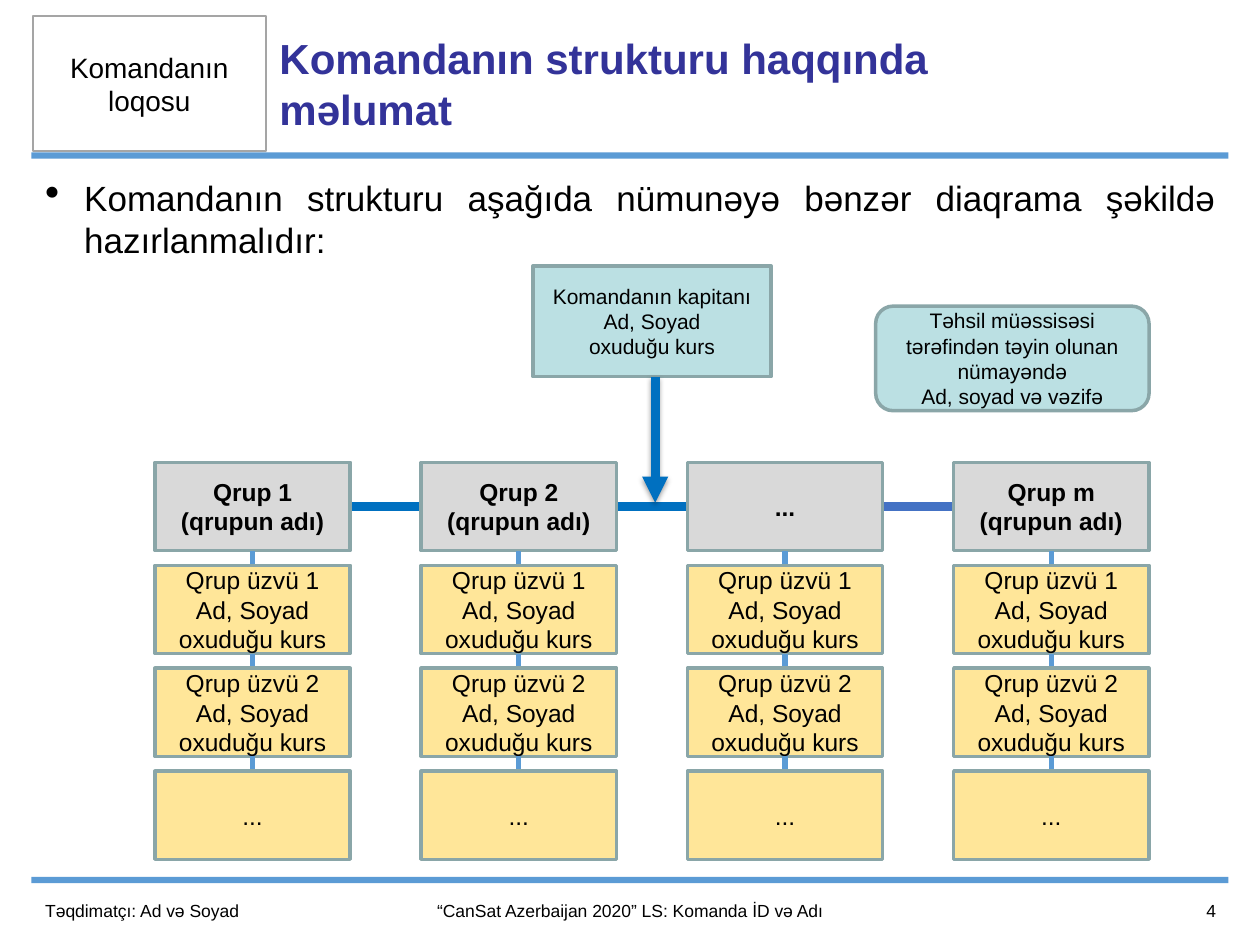
from dataclasses import dataclass

from lxml import etree
from pptx import Presentation
from pptx.dml.color import RGBColor
from pptx.enum.shapes import MSO_CONNECTOR, MSO_SHAPE
from pptx.enum.text import MSO_ANCHOR, PP_ALIGN
from pptx.oxml.ns import qn
from pptx.util import Inches, Pt

STRAIGHT = MSO_CONNECTOR.STRAIGHT
RECTANGLE, ROUNDED = MSO_SHAPE.RECTANGLE, MSO_SHAPE.ROUNDED_RECTANGLE
LEFT, CENTER, RIGHT, JUSTIFY = PP_ALIGN.LEFT, PP_ALIGN.CENTER, PP_ALIGN.RIGHT, PP_ALIGN.JUSTIFY
TOP, MIDDLE = MSO_ANCHOR.TOP, MSO_ANCHOR.MIDDLE


@dataclass(frozen=True)
class Theme:
    font: str = "Arial"
    black: str = "000000"
    white: str = "FFFFFF"
    title: str = "333399"
    rule: str = "5B9BD5"
    logo_border: str = "A5A5A5"
    border: str = "8AA6A8"
    leader: str = "BBE0E3"
    group: str = "D9D9D9"
    member: str = "FFE699"
    link: str = "0070C0"
    last_link: str = "4472C4"
    title_size: int = 24
    body_size: int = 20
    logo_size: int = 16
    chart_size: int = 14
    leader_size: int = 12
    footer_size: int = 10


THEME = Theme()


@dataclass(frozen=True)
class Area:
    left: float
    top: float
    width: float
    height: float

    def lengths(self) -> tuple:
        return tuple(Inches(v) for v in (self.left, self.top, self.width, self.height))


@dataclass(frozen=True)
class TextStyle:
    size: int
    bold: bool = False
    color: str = THEME.black
    align: PP_ALIGN = CENTER
    anchor: MSO_ANCHOR = MIDDLE


@dataclass(frozen=True)
class BoxStyle:
    fill: str
    text: TextStyle
    border: str = THEME.border
    border_width: float = 2
    geometry: MSO_SHAPE = RECTANGLE


LOGO = BoxStyle(THEME.white, TextStyle(THEME.logo_size), THEME.logo_border, 1)
CAPTAIN = BoxStyle(THEME.leader, TextStyle(THEME.leader_size))
DELEGATE = BoxStyle(THEME.leader, TextStyle(THEME.leader_size), geometry=ROUNDED)
GROUP = BoxStyle(THEME.group, TextStyle(THEME.chart_size, bold=True))
MEMBER = BoxStyle(THEME.member, TextStyle(THEME.chart_size))

# Organisation chart grid
GROUP_LEFT, GROUP_TOP = 1.23, 3.67
COLUMN_STEP, ROW_STEP = 2.113, 0.817
CELL_WIDTH, CELL_HEIGHT = 1.55, 0.7

GROUPS = [
    ["Qrup 1", "(qrupun adı)"],
    ["Qrup 2", "(qrupun adı)"],
    ["..."],
    ["Qrup m", "(qrupun adı)"],
]
MEMBERS = [
    ["Qrup üzvü 1", "Ad, Soyad", "oxuduğu kurs"],
    ["Qrup üzvü 2", "Ad, Soyad", "oxuduğu kurs"],
    ["..."],
]
GROUP_LINKS = [THEME.link, THEME.link, THEME.last_link]


def write_text(frame, lines: list[str], style: TextStyle) -> None:
    frame.word_wrap = True
    frame.vertical_anchor = style.anchor
    for index, line in enumerate(lines):
        para = frame.paragraphs[0] if index == 0 else frame.add_paragraph()
        para.alignment = style.align
        span = para.add_run()
        span.text = line
        span.font.name = THEME.font
        span.font.size = Pt(style.size)
        span.font.bold = style.bold
        span.font.color.rgb = RGBColor.from_string(style.color)


def add_text(slide, area: Area, line: str, style: TextStyle):
    box = slide.shapes.add_textbox(*area.lengths())
    write_text(box.text_frame, [line], style)
    return box


def add_bullet(para, indent: float) -> None:
    properties = para._p.get_or_add_pPr()
    properties.set("marL", str(Inches(indent)))
    properties.set("indent", str(-Inches(indent)))
    etree.SubElement(properties, qn("a:buSzPct"), val="120000")
    etree.SubElement(properties, qn("a:buChar"), char="•")


def add_box(slide, area: Area, lines: list[str], style: BoxStyle) -> None:
    box = slide.shapes.add_shape(style.geometry, *area.lengths())
    box.shadow.inherit = False
    box.fill.solid()
    box.fill.fore_color.rgb = RGBColor.from_string(style.fill)
    box.line.color.rgb = RGBColor.from_string(style.border)
    box.line.width = Pt(style.border_width)
    write_text(box.text_frame, lines, style.text)


def add_rule(slide, top: float) -> None:
    rule = slide.shapes.add_shape(RECTANGLE, *Area(0.25, top, 9.5, 0.05).lengths())
    rule.shadow.inherit = False
    rule.fill.solid()
    rule.fill.fore_color.rgb = RGBColor.from_string(THEME.rule)
    rule.line.fill.background()


def add_link(slide, start: tuple[float, float], end: tuple[float, float], color: str, width: float):
    """Draw a straight line without a shadow and return it with its effect list."""
    points = [Inches(value) for value in (*start, *end)]
    link = slide.shapes.add_connector(STRAIGHT, *points)
    link.line.color.rgb = RGBColor.from_string(color)
    link.line.width = Pt(width)
    effects = etree.SubElement(link._element.spPr, qn("a:effectLst"))
    return link, effects


def add_captain_arrow(slide) -> None:
    arrow, effects = add_link(slide, (5.2, 2.99), (5.2, 3.99), THEME.link, 5)
    etree.SubElement(arrow.line._get_or_add_ln(), qn("a:tailEnd"), type="triangle")
    shadow = etree.SubElement(
        effects, qn("a:outerShdw"), blurRad=str(Pt(3.1)), dist=str(Pt(1.6)),
        dir="5400000", rotWithShape="0",
    )
    color = etree.SubElement(shadow, qn("a:srgbClr"), val=THEME.black)
    etree.SubElement(color, qn("a:alpha"), val="38000")


def add_group_column(slide, column: int, heading: list[str]) -> None:
    left = GROUP_LEFT + column * COLUMN_STEP
    center = left + CELL_WIDTH / 2
    for row, lines in enumerate([heading, *MEMBERS]):
        top = GROUP_TOP + row * ROW_STEP
        if row:
            above = top - ROW_STEP + CELL_HEIGHT
            add_link(slide, (center, top), (center, above), THEME.rule, 3)
        style = MEMBER if row else GROUP
        add_box(slide, Area(left, top, CELL_WIDTH, CELL_HEIGHT), lines, style)


def add_group_links(slide) -> None:
    middle = GROUP_TOP + CELL_HEIGHT / 2
    for column, color in enumerate(GROUP_LINKS):
        start = GROUP_LEFT + column * COLUMN_STEP + CELL_WIDTH
        end = GROUP_LEFT + (column + 1) * COLUMN_STEP
        add_link(slide, (start, middle), (end, middle), color, 5)


def add_header(slide) -> None:
    add_rule(slide, 1.21)
    add_box(slide, Area(0.26, 0.13, 1.85, 1.07), ["Komandanın loqosu"], LOGO)
    add_text(slide, Area(2.12, 0.13, 6, 1.06), "Komandanın strukturu haqqında məlumat",
             TextStyle(THEME.title_size, True, THEME.title, LEFT))
    body = add_text(
        slide, Area(0.26, 1.35, 9.49, 0.77),
        "Komandanın strukturu aşağıda nümunəyə bənzər diaqrama şəkildə hazırlanmalıdır:",
        TextStyle(THEME.body_size, align=JUSTIFY, anchor=TOP),
    )
    add_bullet(body.text_frame.paragraphs[0], 0.31)


def add_footer(slide) -> None:
    add_rule(slide, 6.96)
    for left, width, line, align in (
        (0.26, 2.39, "Təqdimatçı: Ad və Soyad", LEFT),
        (2.65, 4.7, "“CanSat Azerbaijan 2020” LS: Komanda İD və Adı", CENTER),
        (8.75, 1, "4", RIGHT),
    ):
        add_text(slide, Area(left, 7.03, width, 0.4), line, TextStyle(THEME.footer_size, align=align))


def main() -> None:
    deck = Presentation()
    deck.slide_width, deck.slide_height = Inches(10), Inches(7.5)
    slide = deck.slides.add_slide(deck.slide_layouts[6])
    add_header(slide)
    add_group_links(slide)
    add_box(slide, Area(4.23, 2.11, 1.89, 0.88),
            ["Komandanın kapitanı", "Ad, Soyad", "oxuduğu kurs"], CAPTAIN)
    add_box(slide, Area(6.95, 2.43, 2.17, 0.83),
            ["Təhsil müəssisəsi tərəfindən təyin olunan nümayəndə", "Ad, soyad və vəzifə"], DELEGATE)
    for column, heading in enumerate(GROUPS):
        add_group_column(slide, column, heading)
    add_captain_arrow(slide)
    add_footer(slide)
    deck.save("out.pptx")


if __name__ == "__main__":
    main()
